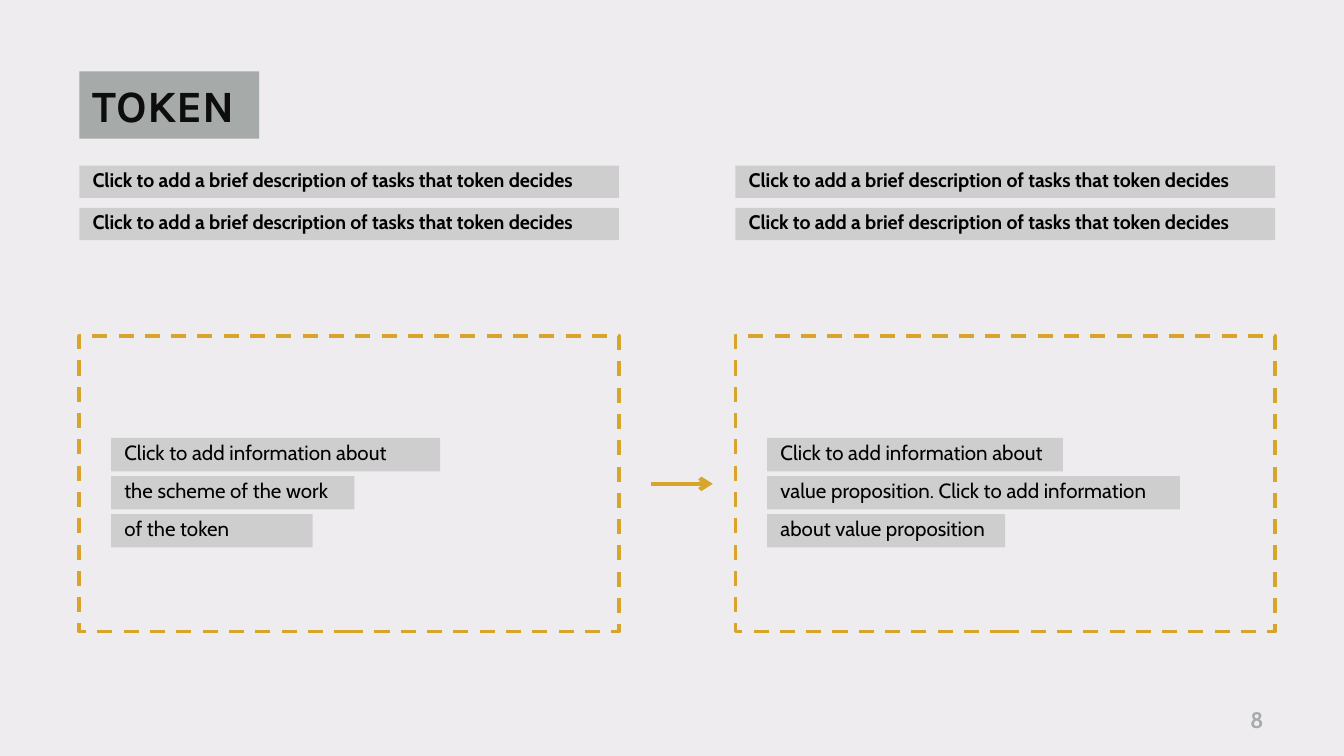
import pptx
import pptx.dml.color
import pptx.enum.dml
import pptx.enum.shapes
import pptx.enum.text
import pptx.oxml
import pptx.oxml.ns
import pptx.util
from pptx.util import Cm

COLORS = {
    "background": "EFECEF",
    "title_bar": "A6AAA9",
    "title": "0D0D0D",
    "bar": "CFCECF",
    "text": "000000",
    "accent": "D7A529",
    "page_number": "A6AAA9",
}
TASK = "Click to add a brief description of tasks that token decides"
COLUMN_WIDTH = 10.2
COLUMNS = [
    {
        "left": 1.5,
        "tasks": [TASK, TASK],
        "lines": [
            ("Click to add information about", 6.22),
            ("the scheme of the work", 4.6),
            ("of the token", 3.81),
        ],
    },
    {
        "left": 13.9,
        "tasks": [TASK, TASK],
        "lines": [
            ("Click to add information about", 5.59),
            ("value proposition. Click to add information", 7.8),
            ("about value proposition", 4.5),
        ],
    },
]
FRAME_TOP, FRAME_HEIGHT = 6.35, 5.59


def color(name):
    return pptx.dml.color.RGBColor.from_string(COLORS[name])


def fill_solid(shape, name):
    shape.fill.solid()
    shape.fill.fore_color.rgb = color(name)


def write(shape, text, size, ink, font="Cabin", bold=False, spacing=None,
          align=pptx.enum.text.PP_ALIGN.LEFT,
          anchor=pptx.enum.text.MSO_ANCHOR.TOP):
    frame = shape.text_frame
    frame.word_wrap = True
    frame.vertical_anchor = anchor
    paragraph = frame.paragraphs[0]
    paragraph.alignment = align
    paragraph.line_spacing = spacing
    run = paragraph.add_run()
    run.text = text
    run.font.name = font
    run.font.size = pptx.util.Pt(size)
    run.font.bold = bold
    run.font.color.rgb = color(ink)


def add_rectangle(slide, left, top, width, height):
    rectangle = slide.shapes.add_shape(
        pptx.enum.shapes.MSO_SHAPE.RECTANGLE,
        Cm(left), Cm(top), Cm(width), Cm(height))
    rectangle.shadow.inherit = False
    return rectangle


def add_bar(slide, text, left, top, width, height, size, bold=False):
    bar = add_rectangle(slide, left, top, width, height)
    fill_solid(bar, "bar")
    bar.line.fill.background()
    write(bar, text, size, "text", bold=bold, spacing=0.8)
    bar.text_frame.auto_size = pptx.enum.text.MSO_AUTO_SIZE.SHAPE_TO_FIT_TEXT


def place_title(slide, left, top, width, height):
    title = slide.shapes.title
    title.left, title.top = Cm(left), Cm(top)
    title.width, title.height = Cm(width), Cm(height)
    fill_solid(title, "title_bar")
    write(title, "TOKEN", 24, "title", font="Karla", bold=True)
    title.text_frame.auto_size = pptx.enum.text.MSO_AUTO_SIZE.NONE


def add_tasks(slide, tasks, left, top, width):
    for row, task in enumerate(tasks):
        add_bar(slide, task, left, top + row * 0.8, width, 0.61, 10.5, bold=True)


def add_scheme(slide, lines, left, top, width, height):
    """Dashed frame with a stack of highlighted text lines."""
    frame = add_rectangle(slide, left, top, width, height)
    frame.fill.background()
    frame.line.color.rgb = color("accent")
    frame.line.width = pptx.util.Pt(2)
    frame.line.dash_style = pptx.enum.dml.MSO_LINE.DASH
    for row, (text, bar_width) in enumerate(lines):
        add_bar(slide, text, left + 0.6, top + 1.93 + row * 0.72,
                bar_width, 0.63, 11)


def add_arrow(slide, start, end, y):
    arrow = slide.shapes.add_connector(
        pptx.enum.shapes.MSO_CONNECTOR.STRAIGHT, Cm(start), Cm(y), Cm(end), Cm(y))
    arrow.line.color.rgb = color("accent")
    arrow.line.width = pptx.util.Pt(2.25)
    line = arrow.line._get_or_add_ln()
    line.append(pptx.oxml.parse_xml(
        f'<a:tailEnd {pptx.oxml.ns.nsdecls("a")} type="arrow"/>'))
    arrow._element.spPr.append(pptx.oxml.parse_xml(
        f'<a:effectLst {pptx.oxml.ns.nsdecls("a")}/>'))


def add_page_number(slide, left, top, width, height):
    number = slide.shapes.add_textbox(Cm(left), Cm(top), Cm(width), Cm(height))
    write(number, "8", 12, "page_number", bold=True,
          align=pptx.enum.text.PP_ALIGN.RIGHT,
          anchor=pptx.enum.text.MSO_ANCHOR.MIDDLE)


def main():
    deck = pptx.Presentation()
    deck.slide_width, deck.slide_height = Cm(25.4), Cm(14.29)
    slide = deck.slides.add_slide(deck.slide_layouts.get_by_name("Title Only"))
    fill_solid(slide.background, "background")

    place_title(slide, 1.5, 1.35, 3.4, 1.27)
    for column in COLUMNS:
        add_tasks(slide, column["tasks"], column["left"], 3.13, COLUMN_WIDTH)
        add_scheme(slide, column["lines"], column["left"], FRAME_TOP,
                   COLUMN_WIDTH, FRAME_HEIGHT)
    gap_start = COLUMNS[0]["left"] + COLUMN_WIDTH
    gap_end = COLUMNS[1]["left"]
    add_arrow(slide, gap_start + 0.6, gap_end - 0.43, FRAME_TOP + FRAME_HEIGHT / 2)
    add_page_number(slide, 18.21, 13.23, 5.92, 0.76)
    deck.save("out.pptx")


if __name__ == "__main__":
    main()
